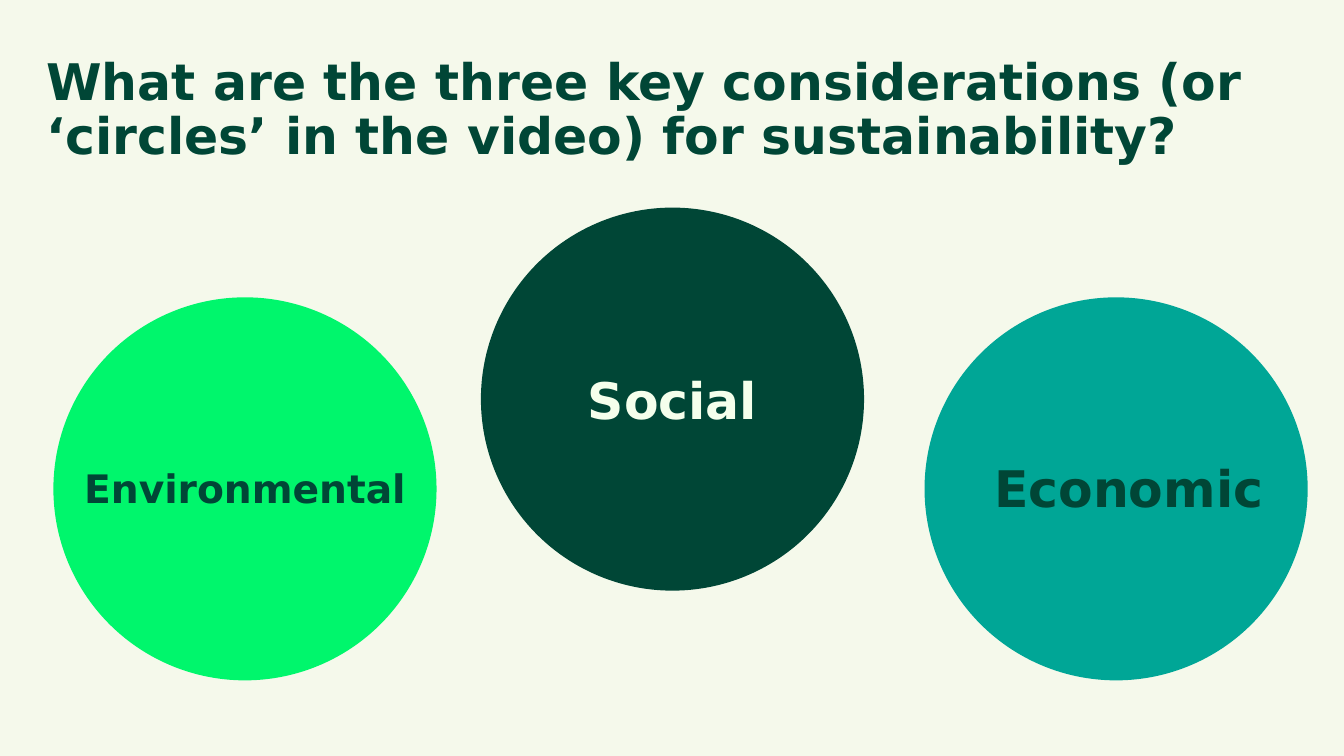
from dataclasses import dataclass

from pptx import Presentation
from pptx.dml.color import RGBColor
from pptx.enum.shapes import MSO_SHAPE
from pptx.enum.text import MSO_ANCHOR, PP_ALIGN
from pptx.slide import Slide
from pptx.text.text import _Paragraph as Paragraph
from pptx.util import Inches, Pt

ELLIPSE = MSO_SHAPE.OVAL
MIDDLE = MSO_ANCHOR.MIDDLE
CENTER = PP_ALIGN.CENTER

CREAM = RGBColor(0xF5, 0xF9, 0xEB)
PALE_GREEN = RGBColor(0xF5, 0xFF, 0xEC)
DARK_GREEN = RGBColor(0x00, 0x46, 0x36)
BRIGHT_GREEN = RGBColor(0x00, 0xF6, 0x6C)
TEAL = RGBColor(0x00, 0xA6, 0x96)

FONT = "DejaVu Sans"
DIAMETER = 3.8
TITLE = ("What are the three key considerations (or ‘circles’ in the video) "
         "for sustainability?")


@dataclass
class Box:
    left: float
    top: float
    width: float
    height: float


@dataclass
class Consideration:
    name: str
    left: float
    top: float
    fill: RGBColor
    label: Box
    size: int
    color: RGBColor


CONSIDERATIONS = [
    Consideration("Environmental", 0.53, 2.95, BRIGHT_GREEN,
                  Box(0.66, 4.55, 3.54, 0.57), 28, DARK_GREEN),
    Consideration("Social", 4.77, 2.06, DARK_GREEN,
                  Box(5.73, 3.61, 1.88, 0.71), 36, PALE_GREEN),
    Consideration("Economic", 9.17, 2.95, TEAL,
                  Box(9.72, 4.48, 2.95, 0.71), 36, DARK_GREEN),
]


def add_text(slide: Slide, box: Box, text: str, size: int, color: RGBColor,
             wrap: bool) -> Paragraph:
    """Add a bold, vertically centred text box and return its paragraph."""
    shape = slide.shapes.add_textbox(Inches(box.left), Inches(box.top),
                                     Inches(box.width), Inches(box.height))
    frame = shape.text_frame
    frame.word_wrap = wrap
    frame.vertical_anchor = MIDDLE
    frame.text = text
    paragraph = frame.paragraphs[0]
    font = paragraph.runs[0].font
    font.name = FONT
    font.size = Pt(size)
    font.bold = True
    font.color.rgb = color
    return paragraph


def add_consideration(slide: Slide, item: Consideration) -> None:
    """Draw a circle and its label."""
    circle = slide.shapes.add_shape(ELLIPSE, Inches(item.left), Inches(item.top),
                                    Inches(DIAMETER), Inches(DIAMETER))
    circle.shadow.inherit = False
    circle.fill.solid()
    circle.fill.fore_color.rgb = item.fill
    circle.line.fill.background()
    label = add_text(slide, item.label, item.name, item.size, item.color, wrap=False)
    label.alignment = CENTER


def main() -> None:
    presentation = Presentation()
    presentation.slide_width = Inches(13.33)
    presentation.slide_height = Inches(7.5)
    slide = presentation.slides.add_slide(presentation.slide_layouts[6])

    # Background
    slide.background.fill.solid()
    slide.background.fill.fore_color.rgb = CREAM

    # Question
    title = add_text(slide, Box(0.36, 0.38, 12.61, 1.45), TITLE, 36, DARK_GREEN,
                     wrap=True)
    title.line_spacing = 0.9

    # Circles
    for item in CONSIDERATIONS:
        add_consideration(slide, item)

    presentation.save("out.pptx")


if __name__ == "__main__":
    main()
